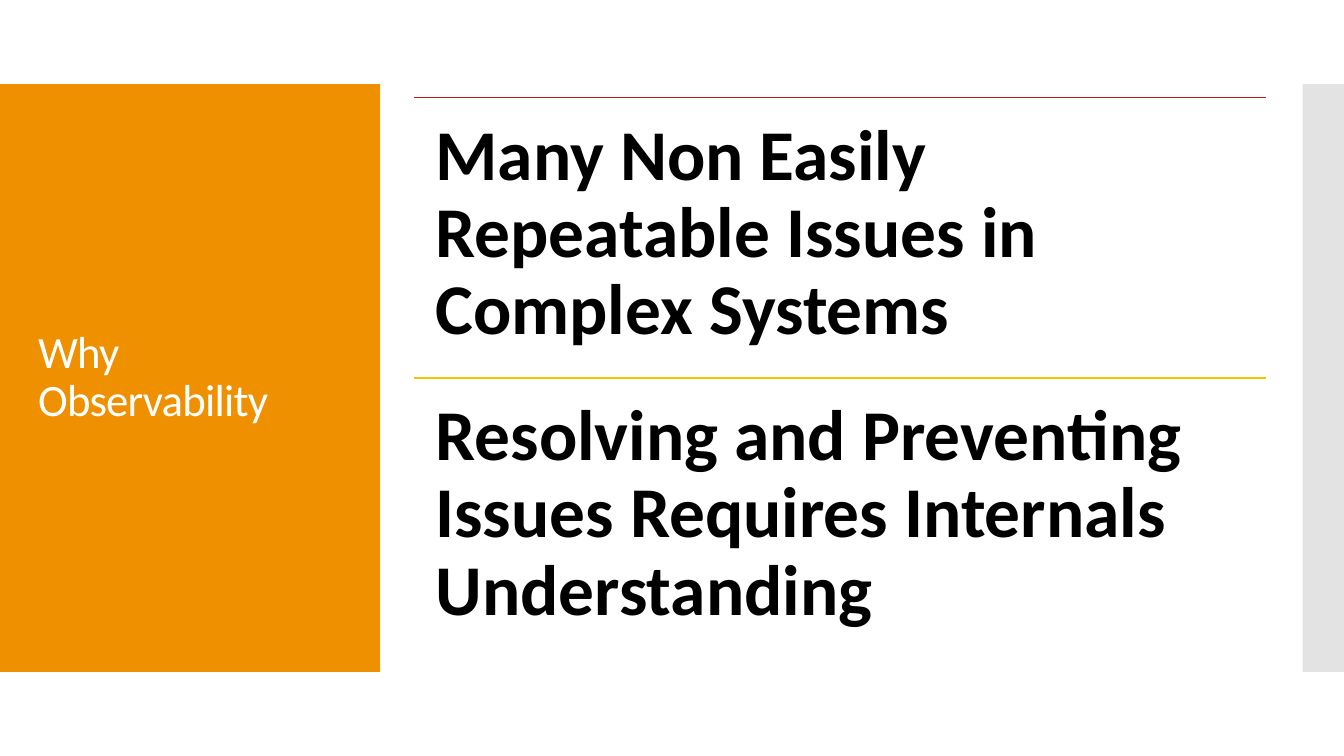
from lxml.etree import SubElement
from pptx import Presentation
from pptx.dml.color import RGBColor
from pptx.enum.shapes import MSO_CONNECTOR, MSO_SHAPE
from pptx.enum.text import MSO_ANCHOR
from pptx.oxml.ns import qn
from pptx.util import Inches, Pt

WIDTH, HEIGHT = 13.33, 7.5
BAND_TOP, BAND_HEIGHT = HEIGHT / 9, HEIGHT * 7 / 9
FONT = "Calibri"
REASONS = [
    ("Many Non Easily Repeatable Issues in Complex Systems", "BE1818"),
    ("Resolving and Preventing Issues Requires Internals Understanding", "EFC700"),
]


def color(value):
    """Turn a hex string into a colour."""
    return RGBColor.from_string(value)


def add_panel(s, box, fill, alpha=None):
    """Fill a box with a plain rectangle, optionally see-through."""
    sp = s.shapes.add_shape(MSO_SHAPE.RECTANGLE, *map(Inches, box))
    sp.shadow.inherit = False
    sp.fill.solid()
    sp.fill.fore_color.rgb = color(fill)
    sp.line.fill.background()
    if alpha is not None:
        srgb = sp.fill._xPr.find(".//" + qn("a:srgbClr"))
        SubElement(srgb, qn("a:alpha")).set("val", str(alpha * 1000))


def add_text(s, box, text, size, fill, inset, bold=False, anchor=MSO_ANCHOR.TOP):
    """Place wrapped text in a box and return its run."""
    tf = s.shapes.add_textbox(*map(Inches, box)).text_frame
    tf.word_wrap = True
    tf.vertical_anchor = anchor
    tf.margin_left = tf.margin_right = Inches(inset[0])
    tf.margin_top = tf.margin_bottom = Inches(inset[1])
    tf.text = text
    p = tf.paragraphs[0]
    p.line_spacing = 0.9
    r = p.runs[0]
    r.font.name, r.font.size, r.font.bold = FONT, Pt(size), bold
    r.font.color.rgb = color(fill)
    return r


def add_title(s, box):
    """Draw the orange title panel in the given box."""
    left, top, width, height = box
    add_panel(s, box, "EF9000")
    text_box = (left + 0.28, top + 0.4, width - 0.55, height - 0.8)
    r = add_text(s, text_box, "Why Observability", 32, "FFFFFF", (0.1, 0.05),
                 anchor=MSO_ANCHOR.MIDDLE)
    r._r.get_or_add_rPr().set("spc", "-60")


def add_reasons(s, box):
    """Stack the reasons in equal rows, each under a coloured rule."""
    left, top, width, height = box
    row = height / len(REASONS)
    for i, (text, rule) in enumerate(REASONS):
        y = top + i * row
        line = s.shapes.add_connector(
            MSO_CONNECTOR.STRAIGHT, *map(Inches, (left, y, left + width, y)))
        line.line.color.rgb = color(rule)
        line.line.width = Pt(0.85)
        SubElement(line._element.spPr, qn("a:effectLst"))
        add_text(s, (left, y, width, row), text, 51, "000000", (0.21, 0.21), bold=True)


def main():
    """Build and save the slide."""
    prs = Presentation()
    prs.slide_width, prs.slide_height = Inches(WIDTH), Inches(HEIGHT)
    s = prs.slides.add_slide(prs.slide_layouts[6])
    add_title(s, (0, BAND_TOP, 3.77, BAND_HEIGHT))
    add_panel(s, (12.92, BAND_TOP, WIDTH - 12.92, BAND_HEIGHT), "C8C8C8", alpha=50)
    add_reasons(s, (4.11, 0.97, 8.45, 5.56))
    prs.save("out.pptx")


if __name__ == "__main__":
    main()
